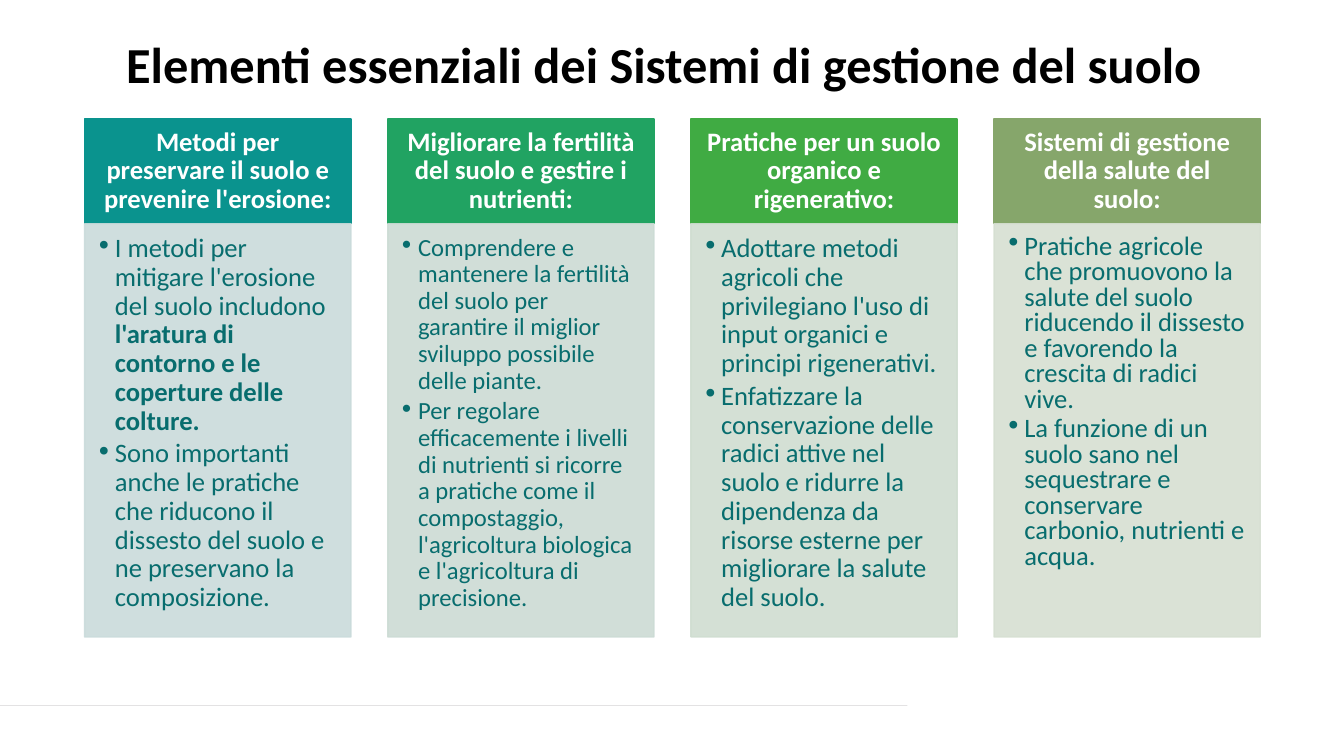
from dataclasses import dataclass

from lxml.etree import SubElement
from pptx import Presentation
from pptx.dml.color import RGBColor
from pptx.enum.shapes import MSO_SHAPE as Preset
from pptx.enum.text import MSO_ANCHOR as Anchor, MSO_AUTO_SIZE as AutoSize, PP_ALIGN as Align
from pptx.oxml.ns import qn
from pptx.shapes.autoshape import Shape
from pptx.slide import Slide
from pptx.text.text import TextFrame, _Paragraph as Paragraph
from pptx.util import Inches, Pt

WIDTH, HEIGHT = 13.33, 7.5
FONT = "Calibri"
BLACK = RGBColor(0x00, 0x00, 0x00)
WHITE = RGBColor(0xFF, 0xFF, 0xFF)
INK = RGBColor(0x23, 0x1F, 0x20)
TEXT_TEAL = RGBColor(0x08, 0x6D, 0x6E)
TEAL, PALE_TEAL = RGBColor(0x0A, 0x93, 0x8E), RGBColor(0xCA, 0xDB, 0xDB)
EMERALD, PALE_EMERALD = RGBColor(0x21, 0xA3, 0x62), RGBColor(0xCC, 0xDB, 0xD4)
GREEN, PALE_GREEN = RGBColor(0x40, 0xAB, 0x43), RGBColor(0xCF, 0xDD, 0xD0)
OLIVE, PALE_OLIVE = RGBColor(0x86, 0xA6, 0x6B), RGBColor(0xD6, 0xDF, 0xD2)

# Column grid
GRID_LEFT, GRID_RIGHT = 0.84, 12.5
COLUMN_WIDTH = 2.64
HEADER_TOP, HEADER_HEIGHT = 1.18, 1.04
BODY_HEIGHT = 4.1
BODY_OPACITY = 89

# Bottom rule: lower edge, as a start point and Bezier segments
Point = tuple[float, float]
RULE_THICKNESS = 0.02
RULE_RIGHT: Point = (9, 7.1)
RULE_START: Point = (4.43, 7.1)
RULE_CURVES: list[tuple[Point, Point, Point]] = [
    ((4.41, 7.1), (2.8, 7.08), (2.23, 7.07)),
    ((1.55, 7.05), (0.52, 7.08), (0.14, 7.08)),
    ((0.06, 7.09), (0.01, 7.09), (0, 7.09)),
]


@dataclass(frozen=True)
class Column:
    heading: str
    color: RGBColor
    pale: RGBColor
    bullets: list[list[str]]  # each bullet: plain text, then optional bold text
    size: float = 19
    spacing: float = 0.9


COLUMNS = [
    Column("Metodi per preservare il suolo e prevenire l'erosione:", TEAL, PALE_TEAL, [
        ["I metodi per mitigare l'erosione del suolo includono ",
         "l'aratura di contorno e le coperture delle colture."],
        ["Sono importanti anche le pratiche che riducono il dissesto del suolo "
         "e ne preservano la composizione."],
    ]),
    Column("Migliorare la fertilità del suolo e gestire i nutrienti:", EMERALD, PALE_EMERALD, [
        ["Comprendere e mantenere la fertilità del suolo per garantire il miglior "
         "sviluppo possibile delle piante."],
        ["Per regolare efficacemente i livelli di nutrienti si ricorre a pratiche come "
         "il compostaggio, l'agricoltura biologica e l'agricoltura di precisione."],
    ], size=17.6),
    Column("Pratiche per un suolo organico e rigenerativo:", GREEN, PALE_GREEN, [
        ["Adottare metodi agricoli che privilegiano l'uso di input organici e "
         "principi rigenerativi."],
        ["Enfatizzare la conservazione delle radici attive nel suolo e ridurre la "
         "dipendenza da risorse esterne per migliorare la salute del suolo."],
    ]),
    Column("Sistemi di gestione della salute del suolo:", OLIVE, PALE_OLIVE, [
        ["Pratiche agricole che promuovono la salute del suolo riducendo il dissesto "
         "e favorendo la crescita di radici vive."],
        ["La funzione di un suolo sano nel sequestrare e conservare carbonio, "
         "nutrienti e acqua."],
    ], spacing=0.8),
]


def set_font(paragraph: Paragraph, size: float, color: RGBColor, bold: bool = False) -> None:
    font = paragraph.font
    font.name, font.size, font.bold = FONT, Pt(size), bold
    font.color.rgb = color


def set_margins(frame: TextFrame, left: float, top: float, right: float, bottom: float) -> None:
    frame.margin_left, frame.margin_top = Inches(left), Inches(top)
    frame.margin_right, frame.margin_bottom = Inches(right), Inches(bottom)


def add_panel(slide: Slide, left: float, top: float, height: float, color: RGBColor) -> Shape:
    panel = slide.shapes.add_shape(
        Preset.RECTANGLE, Inches(left), Inches(top), Inches(COLUMN_WIDTH), Inches(height))
    panel.shadow.inherit = False
    panel.fill.solid()
    panel.fill.fore_color.rgb = color
    panel.line.color.rgb = color
    panel.line.width = Pt(1)
    panel.text_frame.word_wrap = True
    return panel


def set_opacity(shape: Shape, percent: int) -> None:
    for color in shape.fill._xPr.iter(qn("a:srgbClr")):
        SubElement(color, qn("a:alpha"), val=str(percent * 1000))


def add_bullet(paragraph: Paragraph) -> None:
    properties = paragraph._p.get_or_add_pPr()
    indent = Inches(0.19)
    properties.set("marL", str(indent))
    properties.set("indent", str(-indent))
    bullet_color = SubElement(properties, qn("a:buClr"))
    SubElement(bullet_color, qn("a:srgbClr"), val=str(TEXT_TEAL))
    SubElement(properties, qn("a:buChar"), char="∙")


def add_column(slide: Slide, column: Column, left: float) -> None:
    # Heading
    header = add_panel(slide, left, HEADER_TOP, HEADER_HEIGHT, column.color)
    frame = header.text_frame
    set_margins(frame, 0.15, 0.08, 0.15, 0.08)
    frame.vertical_anchor = Anchor.MIDDLE
    paragraph = frame.paragraphs[0]
    paragraph.text = column.heading
    paragraph.alignment = Align.CENTER
    paragraph.line_spacing = column.spacing if column.spacing > 0.9 else 0.9
    set_font(paragraph, 19, WHITE, bold=True)

    # Bulleted body
    body = add_panel(slide, left, HEADER_TOP + HEADER_HEIGHT, BODY_HEIGHT, column.pale)
    set_opacity(body, BODY_OPACITY)
    frame = body.text_frame
    set_margins(frame, 0.11, 0.11, 0.15, 0.17)
    frame.vertical_anchor = Anchor.TOP
    for index, parts in enumerate(column.bullets):
        paragraph = frame.add_paragraph() if index else frame.paragraphs[0]
        add_bullet(paragraph)
        paragraph.alignment = Align.LEFT
        paragraph.line_spacing = column.spacing
        if index:
            paragraph.space_before = Pt(2.9)
        set_font(paragraph, column.size, TEXT_TEAL)
        for part_index, part in enumerate(parts):
            run = paragraph.add_run()
            run.text = part
            if part_index:
                run.font.bold = True


def bezier(start: Point, first: Point, second: Point, end: Point, steps: int = 12) -> list[Point]:
    points = []
    for step in range(1, steps + 1):
        t = step / steps
        weights = ((1 - t) ** 3, 3 * t * (1 - t) ** 2, 3 * t * t * (1 - t), t ** 3)
        controls = (start, first, second, end)
        points.append((sum(w * p[0] for w, p in zip(weights, controls)),
                       sum(w * p[1] for w, p in zip(weights, controls))))
    return points


def add_rule(slide: Slide) -> None:
    lower = [RULE_RIGHT, RULE_START]
    for curve in RULE_CURVES:
        lower += bezier(lower[-1], *curve)
    upper = [(x, y - RULE_THICKNESS) for x, y in reversed(lower)]
    builder = slide.shapes.build_freeform(*RULE_RIGHT, scale=Inches(1))
    builder.add_line_segments(lower[1:] + upper, close=True)
    rule = builder.convert_to_shape()
    rule.shadow.inherit = False
    rule.fill.solid()
    rule.fill.fore_color.rgb = INK
    rule.line.fill.background()


def set_title(slide: Slide, text: str) -> None:
    title = slide.shapes.title
    title.left, title.top = Inches(0.73), Inches(0.28)
    title.width, title.height = Inches(11.83), Inches(0.71)
    frame = title.text_frame
    frame.word_wrap, frame.auto_size = True, AutoSize.NONE
    frame.vertical_anchor = Anchor.TOP
    set_margins(frame, 0.1, 0.05, 0.1, 0.05)
    paragraph = frame.paragraphs[0]
    paragraph.text = text
    paragraph.alignment = Align.CENTER
    set_font(paragraph, 36, BLACK, bold=True)


def main() -> None:
    presentation = Presentation()
    presentation.slide_width, presentation.slide_height = Inches(WIDTH), Inches(HEIGHT)
    slide = presentation.slides.add_slide(presentation.slide_layouts[5])
    add_rule(slide)
    pitch = (GRID_RIGHT - GRID_LEFT - COLUMN_WIDTH) / (len(COLUMNS) - 1)
    for index, column in enumerate(COLUMNS):
        add_column(slide, column, GRID_LEFT + index * pitch)
    set_title(slide, "Elementi essenziali dei Sistemi di gestione del suolo ")
    presentation.save("out.pptx")


if __name__ == "__main__":
    main()
